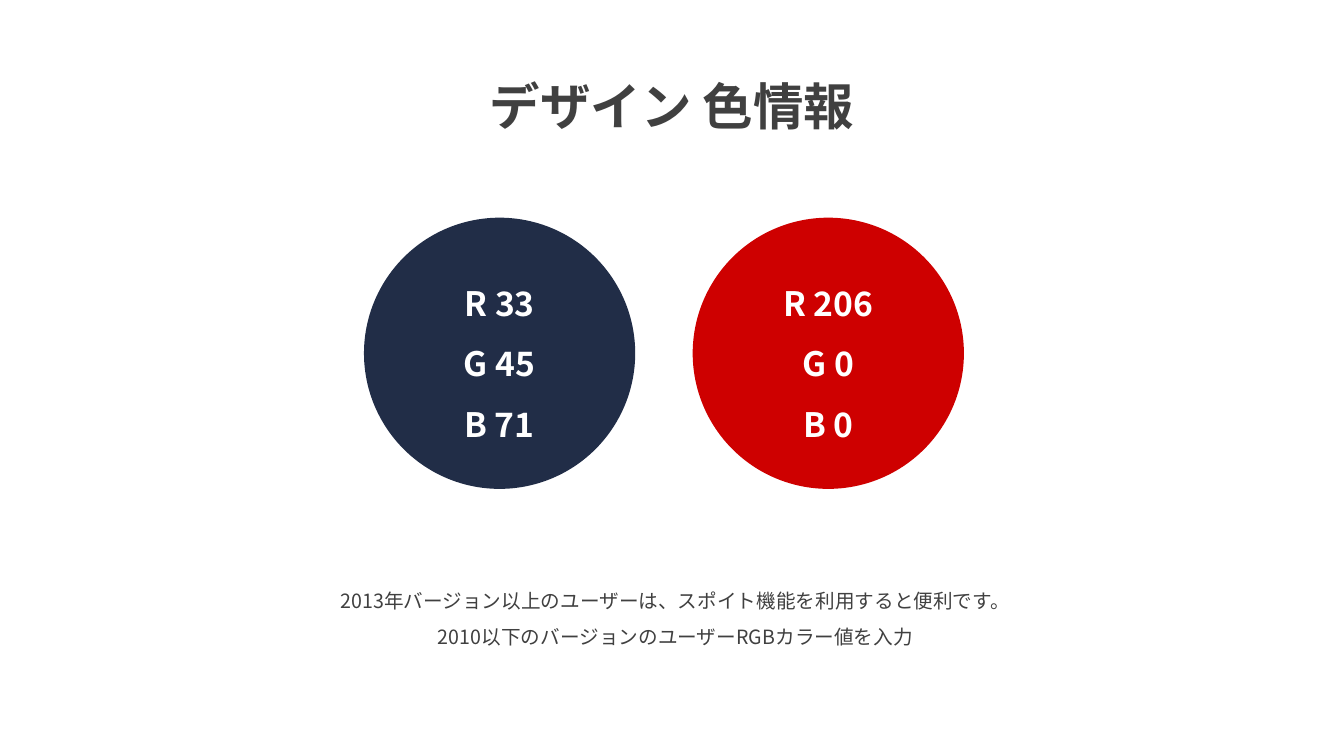
from dataclasses import dataclass

from lxml.etree import SubElement
from pptx import Presentation
from pptx.dml.color import RGBColor
from pptx.enum.shapes import MSO_SHAPE
from pptx.enum.text import MSO_ANCHOR, MSO_AUTO_SIZE, PP_ALIGN
from pptx.oxml.ns import qn
from pptx.util import Inches, Pt


@dataclass(frozen=True)
class Theme:
    font: str = "Noto Sans CJK KR"
    ink: RGBColor = RGBColor(64, 64, 64)
    paper: RGBColor = RGBColor(255, 255, 255)
    navy: RGBColor = RGBColor(33, 45, 71)
    red: RGBColor = RGBColor(206, 0, 0)
    title_size: int = 36
    swatch_size: int = 24
    note_size: int = 14
    line_spacing: float = 1.5


class ColorGuide:
    def __init__(self, slide, theme):
        self.slide = slide
        self.theme = theme

    def apply(self, target, formats):
        for attribute, value in formats.items():
            setattr(target, attribute, value)

    def fill_text(self, frame, lines, size, color, bold):
        paragraph_format = {
            "alignment": PP_ALIGN.CENTER,
            "line_spacing": self.theme.line_spacing,
        }
        font_format = {"size": Pt(size), "bold": bold, "name": self.theme.font}
        frame.text = "\n".join(lines)
        for paragraph in frame.paragraphs:
            self.apply(paragraph, paragraph_format)
            for run in paragraph.runs:
                self.apply(run.font, font_format)
                run.font.color.rgb = color
                properties = run._r.get_or_add_rPr()
                SubElement(properties, qn("a:ea"), typeface=self.theme.font)

    def swatch(self, left, top, diameter, color):
        circle = self.slide.shapes.add_shape(
            MSO_SHAPE.OVAL, Inches(left), Inches(top), Inches(diameter), Inches(diameter)
        )
        circle.shadow.inherit = False
        circle.fill.solid()
        circle.fill.fore_color.rgb = color
        circle.line.fill.background()
        self.apply(circle.text_frame, {"vertical_anchor": MSO_ANCHOR.MIDDLE, "word_wrap": True})
        channels = [f"{channel} {value}" for channel, value in zip("RGB", color)]
        self.fill_text(circle.text_frame, channels, self.theme.swatch_size, self.theme.paper, True)

    def text(self, box, lines, size, bold=False):
        frame = self.slide.shapes.add_textbox(*map(Inches, box)).text_frame
        self.apply(frame, {"word_wrap": True, "auto_size": MSO_AUTO_SIZE.SHAPE_TO_FIT_TEXT})
        self.fill_text(frame, lines, size, self.theme.ink, bold)


def main():
    theme = Theme()
    deck = Presentation()
    deck.slide_width, deck.slide_height = Inches(13.33), Inches(7.5)
    guide = ColorGuide(deck.slides.add_slide(deck.slide_layouts[6]), theme)

    first_left, swatch_top, diameter, pitch = 3.61, 2.16, 2.69, 3.26
    for index, color in enumerate((theme.navy, theme.red)):
        guide.swatch(first_left + index * pitch, swatch_top, diameter, color)

    guide.text((4.24, 0.4, 4.85, 0.91), ["デザイン 色情報"], theme.title_size, bold=True)
    guide.text(
        (2.52, 5.68, 8.36, 0.77),
        [
            "2013年バージョン以上のユーザーは、スポイト機能を利用すると便利です。",
            "2010以下のバージョンのユーザーRGBカラー値を入力",
        ],
        theme.note_size,
    )
    deck.save("out.pptx")


if __name__ == "__main__":
    main()
